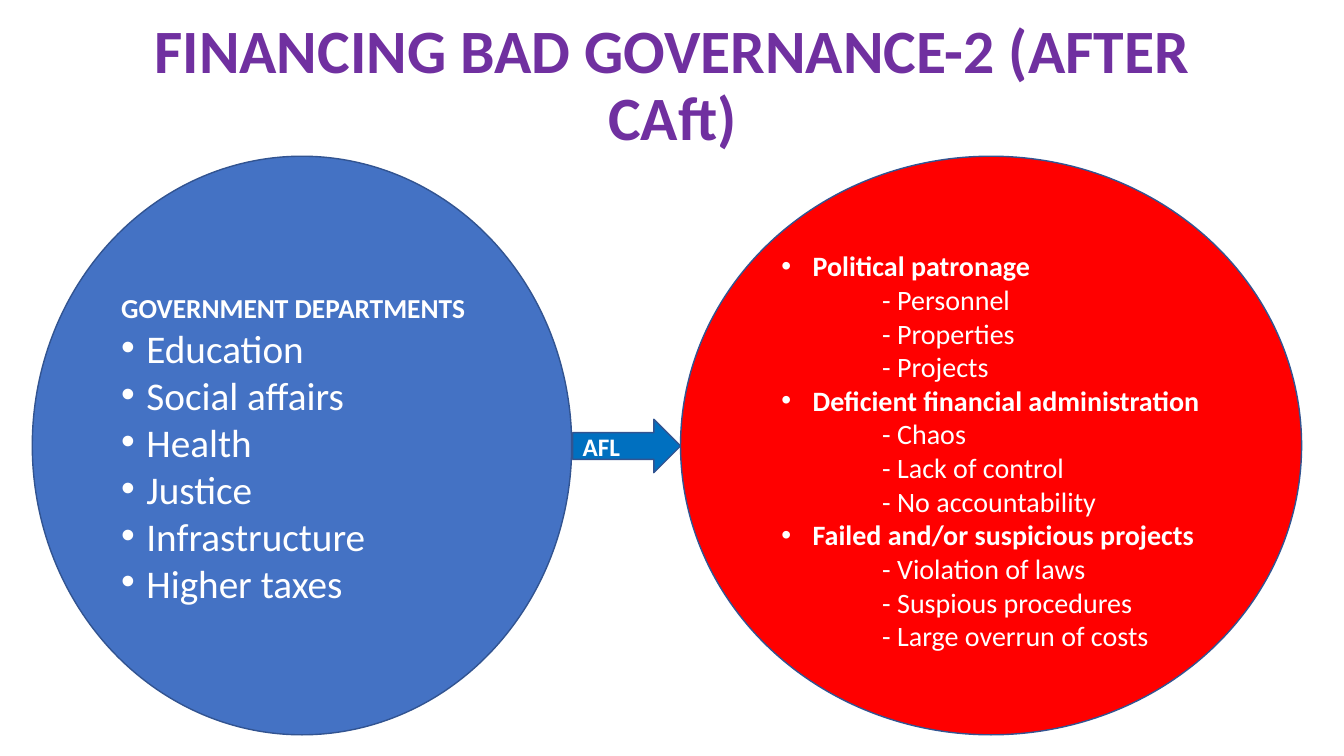
from lxml.etree import SubElement
from pptx import Presentation
from pptx.dml.color import RGBColor
from pptx.enum.shapes import MSO_SHAPE
from pptx.enum.text import MSO_ANCHOR, PP_ALIGN
from pptx.oxml.ns import qn
from pptx.util import Inches, Pt

PURPLE = RGBColor(0x70, 0x30, 0xA0)
BLUE = RGBColor(0x44, 0x72, 0xC4)
RED = RGBColor(0xFF, 0x00, 0x00)
ARROW_BLUE = RGBColor(0x00, 0x70, 0xC0)
OUTLINE = RGBColor(0x32, 0x54, 0x91)
WHITE = RGBColor(0xFF, 0xFF, 0xFF)

DEPARTMENTS = ["Education", "Social affairs", "Health", "Justice",
               "Infrastructure", "Higher taxes"]
PROBLEMS = {
    "Political patronage": ["Personnel", "Properties", "Projects"],
    "Deficient financial administration":
        ["Chaos", "Lack of control", "No accountability"],
    "Failed and/or suspicious projects":
        ["Violation of laws", "Suspious procedures", "Large overrun of costs"],
}


def write(p, text, size, bold=False, color=WHITE, align=PP_ALIGN.LEFT,
          spacing=None, before=0, indent=0, bullet=False):
    """Fill one paragraph; a bullet hangs in the indent."""
    p.alignment, p.line_spacing, p.space_before = align, spacing, Pt(before)
    pPr = p._p.get_or_add_pPr()
    pPr.set("marL", str(Inches(indent)))
    pPr.set("indent", str(-Inches(indent) if bullet else 0))
    if bullet:
        SubElement(pPr, qn("a:buFont")).set("typeface", "Arial")
        SubElement(pPr, qn("a:buChar")).set("char", "•")
    r = p.add_run()
    r.text = text
    r.font.name, r.font.size, r.font.bold = "Calibri", Pt(size), bold
    r.font.color.rgb = color


def add_block(s, kind, left, top, width, height, fill, lower=0):
    """Add an outlined shape; lower moves its centred text down."""
    sp = s.shapes.add_shape(kind, Inches(left), Inches(top),
                            Inches(width), Inches(height))
    sp.shadow.inherit = False
    sp.fill.solid()
    sp.fill.fore_color.rgb = fill
    sp.line.color.rgb = OUTLINE
    sp.line.width = Pt(1)
    tf = sp.text_frame
    tf.word_wrap = True
    tf.vertical_anchor = MSO_ANCHOR.MIDDLE
    tf.margin_top = Inches(0.05 + 2 * lower)
    return tf


def add_title(s, text):
    title = s.shapes.title
    title.left, title.top = Inches(0.92), Inches(0.4)
    title.width, title.height = Inches(11.5), Inches(0.93)
    tf = title.text_frame
    tf.word_wrap = True
    tf.vertical_anchor = MSO_ANCHOR.MIDDLE
    write(tf.paragraphs[0], text, 44, bold=True, color=PURPLE,
          align=PP_ALIGN.CENTER, spacing=0.9)


def add_problems(s):
    tf = add_block(s, MSO_SHAPE.OVAL, 6.75, 1.55, 6.16, 5.74, RED, lower=0.05)
    p = tf.paragraphs[0]
    for heading, items in PROBLEMS.items():
        if p is None:
            p = tf.add_paragraph()
        write(p, heading, 20, bold=True, spacing=Pt(24), indent=0.31, bullet=True)
        for item in items:
            write(tf.add_paragraph(), f"- {item}", 20, spacing=Pt(24), indent=1)
        p = None


def add_departments(s):
    tf = add_block(s, MSO_SHAPE.OVAL, 0.32, 1.55, 5.35, 5.74, BLUE, lower=0.07)
    write(tf.paragraphs[0], "GOVERNMENT DEPARTMENTS", 19.6, bold=True,
          spacing=0.7, before=10)
    for name in DEPARTMENTS:
        write(tf.add_paragraph(), name, 28, spacing=0.7, before=10,
              indent=0.25, bullet=True)


def main():
    prs = Presentation()
    prs.slide_width, prs.slide_height = Inches(13.33), Inches(7.5)
    s = prs.slides.add_slide(prs.slide_layouts[5])

    add_title(s, "FINANCING BAD GOVERNANCE-2 (AFTER CAft)")

    # Two circles, joined by the arrow
    add_problems(s)
    add_departments(s)
    tf = add_block(s, MSO_SHAPE.RIGHT_ARROW, 5.68, 4.16, 1.07, 0.53, ARROW_BLUE)
    write(tf.paragraphs[0], "AFL", 18, bold=True)

    prs.save("out.pptx")


if __name__ == "__main__":
    main()
